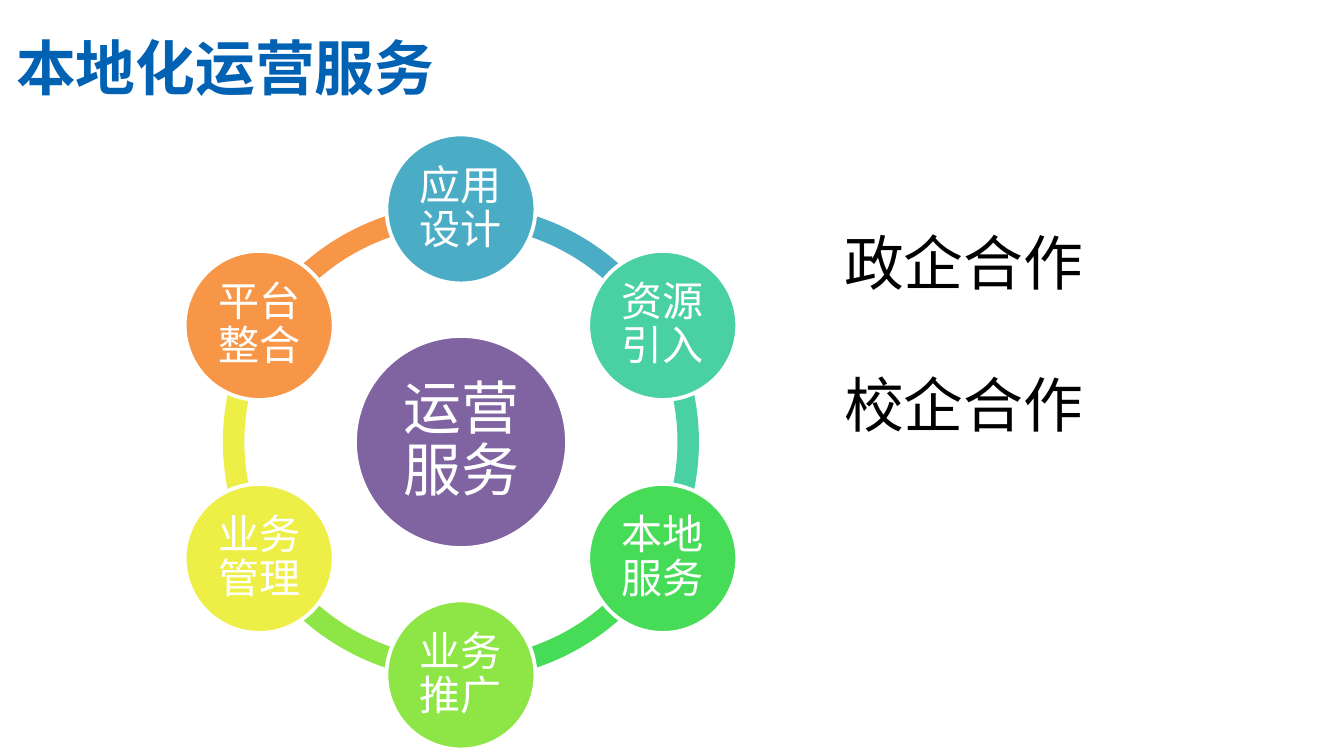
"""Build a slide showing the six local operation services around a hub."""
from dataclasses import dataclass
from math import cos, radians, sin

from lxml.etree import SubElement
from pptx import Presentation
from pptx.dml.color import RGBColor
from pptx.enum.shapes import MSO_SHAPE as Shape
from pptx.enum.text import MSO_ANCHOR as Anchor, PP_ALIGN as Align
from pptx.oxml.ns import qn
from pptx.util import Emu, Pt


@dataclass(frozen=True)
class Theme:
    latin: str = "Calibri"
    chinese: str = "Noto Sans CJK SC"
    title: str = "0162B3"
    body: str = "000000"
    white: str = "FFFFFF"
    hub: str = "8064A2"
    heading_size: int = 32
    hub_size: int = 31
    node_size: int = 22
    outline: int = 2


theme = Theme()
SCALE = 914400 / 134.4


def px(length):
    return Emu(round(length * SCALE))


def write(para, text, *, size, color, font=theme.chinese, bold=False,
          align=Align.LEFT, spacing=1.0, before=0):
    para.alignment = align
    para.line_spacing = spacing
    para.space_before = Pt(before)
    span = para.add_run()
    span.text = text
    span.font.name = font
    span.font.size = Pt(size)
    span.font.bold = bold
    span.font.color.rgb = RGBColor.from_string(color)
    SubElement(span.font._element, qn("a:ea"), typeface=theme.chinese)


deck = Presentation()
deck.slide_width, deck.slide_height = px(1344), px(756)
page = deck.slides.add_slide(deck.slide_layouts[6])
shapes = page.shapes

center_x, center_y = 461, 442
ring_size, orbit = 476, 233
services = [
    ("应用设计", "4BACC6"),
    ("资源引入", "49D1A3"),
    ("本地服务", "47DC57"),
    ("业务推广", "8DE646"),
    ("业务管理", "EEEF46"),
    ("平台整合", "F79646"),
]

for index, (label, color) in reversed(list(enumerate(services))):
    start = (270 + 60 * index) % 360
    end = (start + 60) % 360
    arc = shapes.add_shape(
        Shape.BLOCK_ARC, px(center_x - ring_size / 2), px(center_y - ring_size / 2),
        px(ring_size), px(ring_size))
    arc.adjustments[0] = start * 0.6
    arc.adjustments[1] = end * 0.6
    arc.adjustments[2] = 0.045
    arc.shadow.inherit = False
    arc.fill.solid()
    arc.fill.fore_color.rgb = RGBColor.from_string(color)
    arc.line.fill.background()

circles = [("运营服务", theme.hub, center_x, center_y, 212, theme.hub_size, 5)]
for index, (label, color) in enumerate(services):
    angle = radians(60 * index - 90)
    circles.append((label, color, center_x + orbit * cos(angle),
                    center_y + orbit * sin(angle), 149, theme.node_size, 4))

for label, color, x, y, diameter, size, inset in circles:
    circle = shapes.add_shape(
        Shape.OVAL, px(x - diameter / 2), px(y - diameter / 2), px(diameter), px(diameter))
    circle.shadow.inherit = False
    circle.fill.solid()
    circle.fill.fore_color.rgb = RGBColor.from_string(color)
    circle.line.color.rgb = RGBColor.from_string(theme.white)
    circle.line.width = Pt(theme.outline)
    frame = circle.text_frame
    frame.word_wrap = True
    frame.vertical_anchor = Anchor.MIDDLE
    frame.margin_left = frame.margin_right = px(inset)
    frame.margin_top = frame.margin_bottom = px(inset)
    write(frame.paragraphs[0], label, size=size, color=theme.white,
          font=theme.latin, align=Align.CENTER, spacing=0.9)

title_box = shapes.add_textbox(px(3), px(8), px(1210), px(82))
title_box.text_frame.word_wrap = True
title_box.text_frame.vertical_anchor = Anchor.MIDDLE
write(title_box.text_frame.paragraphs[0], "本地化运营服务",
      size=theme.heading_size, color=theme.title, bold=True, spacing=1.5)

partner_box = shapes.add_textbox(px(831), px(219), px(269), px(231))
partner_box.text_frame.word_wrap = False
for index, partner in enumerate(["政企合作", "校企合作"]):
    para = (partner_box.text_frame.add_paragraph() if index
            else partner_box.text_frame.paragraphs[0])
    write(para, partner, size=theme.heading_size, color=theme.body,
          before=38 * index)

deck.save("out.pptx")
